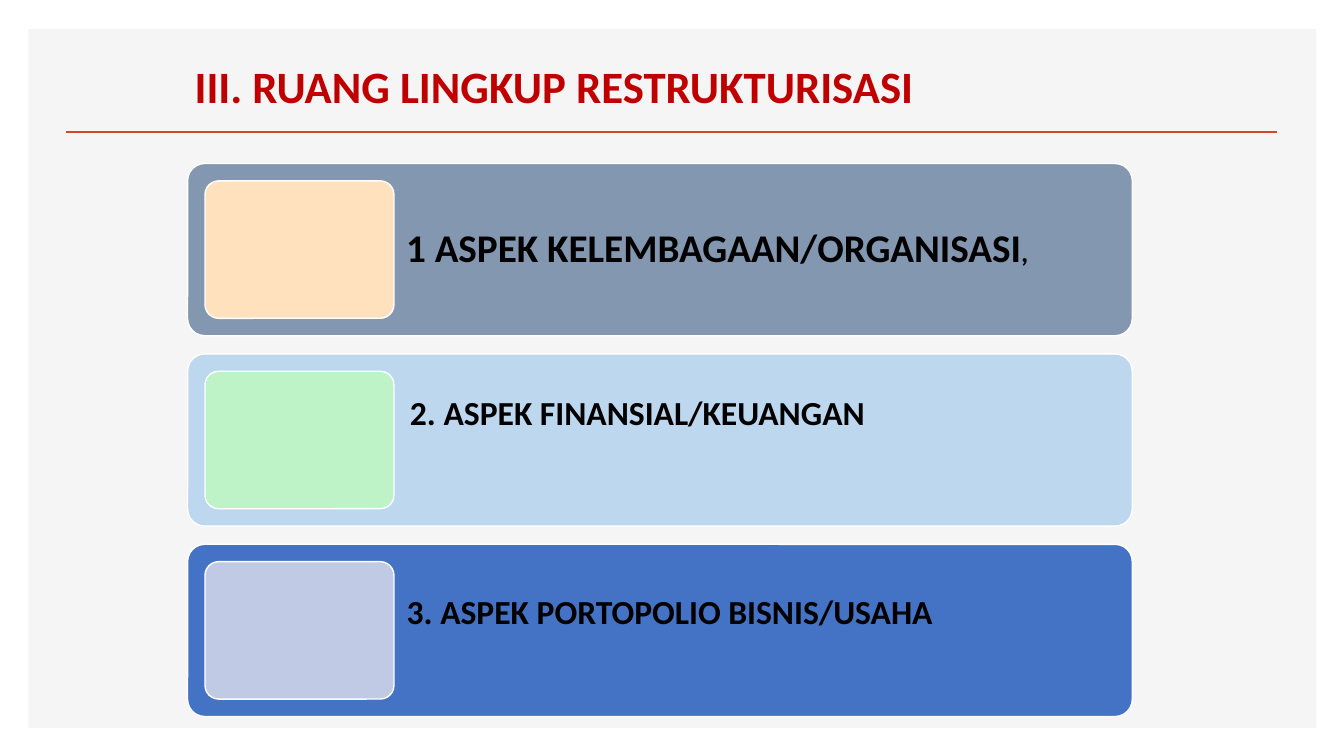
from lxml import etree
from pptx import Presentation
from pptx.dml.color import RGBColor
from pptx.enum import shapes, text
from pptx.oxml.ns import qn
from pptx.util import Pt

COLORS = {
    "panel": "F5F5F5", "rule": "D24726", "title": "C00000",
    "text": "000000", "outline": "FFFFFF",
    "slate": "8497B0", "sky": "BDD7EE", "blue": "4472C4",
    "peach": "FFE2BD", "mint": "BDF3C6", "lavender": "C1CAE4",
}


class Deck:
    font = "Calibri"

    def __init__(self):
        self.prs = Presentation()
        self.prs.slide_width, self.prs.slide_height = Pt(960), Pt(540)
        self.s = self.prs.slides.add_slide(self.prs.slide_layouts[5])

    def color(self, name):
        return RGBColor.from_string(COLORS[name])

    def box(self, kind, left, top, width, height, fill, outline=None):
        sp = self.s.shapes.add_shape(kind, Pt(left), Pt(top), Pt(width), Pt(height))
        sp.shadow.inherit = False
        sp.fill.solid()
        sp.fill.fore_color.rgb = self.color(fill)
        if outline:
            sp.line.color.rgb = self.color(outline)
            sp.line.width = Pt(1)
        else:
            sp.line.fill.background()
        return sp

    def card(self, left, top, width, height, fill):
        sp = self.box(shapes.MSO_SHAPE.ROUNDED_RECTANGLE,
                      left, top, width, height, fill, "outline")
        sp.adjustments[0] = 0.1

    def rule(self, left, right, y):
        line = self.s.shapes.add_connector(
            shapes.MSO_CONNECTOR.STRAIGHT, Pt(left), Pt(y), Pt(right), Pt(y))
        line.line.color.rgb = self.color("rule")
        line.line.width = Pt(2)
        etree.SubElement(line._element.spPr, qn("a:effectLst"))

    def add_runs(self, tf, runs, color, spacing):
        tf.word_wrap = True
        p = tf.paragraphs[0]
        p.alignment = text.PP_ALIGN.LEFT
        p.line_spacing = spacing
        for words, size in runs:
            r = p.add_run()
            r.text = words
            r.font.name, r.font.size, r.font.bold = self.font, Pt(size), True
            r.font.color.rgb = self.color(color)

    def title(self, left, top, width, height, words):
        sp = self.s.shapes.title
        sp.left, sp.top, sp.width, sp.height = Pt(left), Pt(top), Pt(width), Pt(height)
        sp.text_frame.vertical_anchor = text.MSO_ANCHOR.MIDDLE
        self.add_runs(sp.text_frame, [(words, 32)], "title", 0.9)
        self.s.shapes._spTree.append(sp._element)

    def label(self, left, top, width, height, insets, runs):
        sp = self.s.shapes.add_textbox(Pt(left), Pt(top), Pt(width), Pt(height))
        tf = sp.text_frame
        tf.margin_left, tf.margin_top, tf.margin_right, tf.margin_bottom = map(Pt, insets)
        tf.vertical_anchor = text.MSO_ANCHOR.MIDDLE
        self.add_runs(tf, runs, "text", 0.9)


def main():
    deck = Deck()
    deck.box(shapes.MSO_SHAPE.RECTANGLE, 20.2, 20.9, 920, 499, "panel")
    deck.rule(47.5, 912.2, 94.3)
    deck.title(131.8, 28.1, 700.6, 71.3, "III. RUANG LINGKUP RESTRUKTURISASI")

    left, first_top, width, height, pitch, pad = 134, 116.8, 674.8, 123, 136, 12.4
    aspects = [
        ("slate", "peach", (281.5, 116.8, 527.8, 123), (8.6, 8.6, 8.6, 8.6),
         [("1 ASPEK KELEMBAGAAN/ORGANISASI", 28), (",", 20)]),
        ("sky", "mint", (285.8, 278, 477.4, 36), (7.2, 3.6, 7.2, 3.6),
         [("2. ASPEK FINANSIAL/KEUANGAN", 24)]),
        ("blue", "lavender", (281.5, 388.8, 527.8, 123), (9, 5, 5, 29),
         [("3. ASPEK PORTOPOLIO BISNIS/USAHA", 24)]),
    ]
    for i, (band, tile, area, insets, runs) in enumerate(aspects):
        top = first_top + i * pitch
        deck.card(left, top, width, height, band)
        deck.card(left + pad, top + pad, 135, height - 2 * pad, tile)
        deck.label(*area, insets, runs)

    deck.prs.save("out.pptx")


if __name__ == "__main__":
    main()
